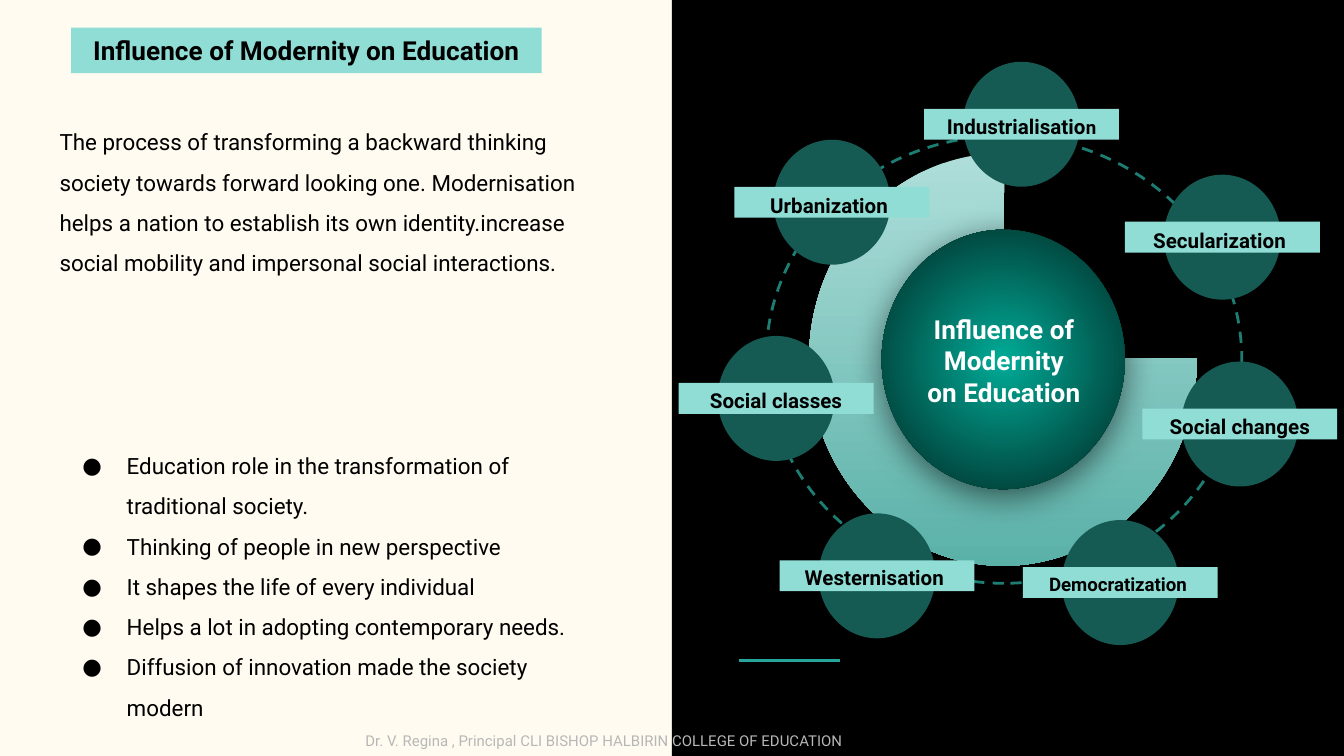
from dataclasses import dataclass
from typing import Optional

import pptx
import pptx.dml.color
import pptx.enum.dml
import pptx.enum.shapes
import pptx.enum.text
import pptx.oxml
import pptx.oxml.ns
import pptx.util
from lxml import etree

RGB = pptx.dml.color.RGBColor
SHAPE = pptx.enum.shapes.MSO_SHAPE
ALIGN = pptx.enum.text.PP_ALIGN
ANCHOR = pptx.enum.text.MSO_ANCHOR
Pt = pptx.util.Pt
qn = pptx.oxml.ns.qn

CREAM = RGB(0xFF, 0xFB, 0xF0)
BLACK = RGB(0, 0, 0)
WHITE = RGB(0xFF, 0xFF, 0xFF)
GREY = RGB(0xB7, 0xB7, 0xB7)
MINT = RGB(0x90, 0xDD, 0xD6)
PINE = RGB(0x15, 0x5B, 0x54)
TEAL = RGB(0x26, 0xA6, 0x9A)
DASH = RGB(0x1D, 0x7E, 0x74)
PALE = RGB(0xAF, 0xDE, 0xDA)
SEA = RGB(0x5A, 0xB1, 0xA8)
JADE = RGB(0x00, 0xAB, 0x97)
DEEP = RGB(0x02, 0x26, 0x22)

FONT = "Roboto"
COLS, ROWS = 100, 56.25
CELL = pptx.util.Inches(0.1)


@dataclass(frozen=True)
class Box:
    col: float
    row: float
    wide: float
    high: float

    def place(self) -> tuple[int, ...]:
        return tuple(round(n * CELL) for n in (self.col, self.row, self.wide, self.high))


@dataclass(frozen=True)
class Topic:
    name: str
    col: float
    row: float
    size: int = 11
    tail: str = ""
    tail_size: Optional[int] = None


TOPICS = [
    Topic("Industrialisatio", 71.65, 4.6, tail="n", tail_size=10),
    Topic("Secularization", 86.6, 13, tail=" ", tail_size=12),
    Topic("Social changes", 87.9, 26.9),
    Topic("Democratization ", 79, 38.7, size=10),
    Topic("Westernisation ", 60.9, 38.2),
    Topic("Social classes", 53.4, 25),
    Topic("Urbanization", 57.55, 10.4, tail=" ", tail_size=12),
]
INTRO = (
    "The process of transforming a backward thinking society towards forward "
    "looking one. Modernisation helps a nation to establish its own "
    "identity.increase social mobility and impersonal social interactions."
)
POINTS = [
    "Education role in the transformation of traditional society.",
    "Thinking of people in new perspective",
    "It shapes the life of every individual",
    "Helps a lot in adopting contemporary needs.",
    "Diffusion of innovation made the society modern",
]
HEADING = "Influence of Modernity on Education"


def add_shape(slide, kind, box: Box, fill: Optional[RGB] = None):
    shape = slide.shapes.add_shape(kind, *box.place())
    shape.shadow.inherit = False
    shape.line.fill.background()
    if fill is None:
        shape.fill.background()
    else:
        shape.fill.solid()
        shape.fill.fore_color.rgb = fill
    return shape


def shade(shape, start: RGB, end: RGB, round_fill: bool = False) -> None:
    shape.fill.gradient()
    for stop, tint, spot in zip(shape.fill.gradient_stops, (start, end), (0, 1)):
        stop.color.rgb = tint
        stop.position = spot
    if not round_fill:
        shape.fill.gradient_angle = 270
        return
    grad = shape._element.spPr.find(qn("a:gradFill"))
    grad.remove(grad.find(qn("a:lin")))
    route = etree.SubElement(grad, qn("a:path"), path="circle")
    etree.SubElement(route, qn("a:fillToRect"), l="50000", t="50000", r="50000", b="50000")


def cast_shadow(shape, blur: float, drop: float, share: int) -> None:
    effect = shape._element.spPr.find(qn("a:effectLst"))
    outer = etree.SubElement(
        effect, qn("a:outerShdw"), blurRad=str(Pt(blur)), dist=str(Pt(drop)),
        dir="5400000", algn="bl", rotWithShape="0",
    )
    tint = etree.SubElement(outer, qn("a:srgbClr"), val=str(BLACK))
    etree.SubElement(tint, qn("a:alpha"), val=str(share * 1000))


def set_frame(frame, anchor=ANCHOR.MIDDLE) -> None:
    frame.word_wrap = True
    frame.auto_size = pptx.enum.text.MSO_AUTO_SIZE.NONE
    frame.vertical_anchor = anchor
    frame.margin_left = frame.margin_right = CELL
    frame.margin_top = frame.margin_bottom = CELL


def style(para, size: float, tint: RGB, bold: bool = False, align=ALIGN.LEFT,
          space: Optional[float] = None) -> None:
    para.alignment = align
    para.line_spacing = space
    para.font.name = FONT
    para.font.size = Pt(size)
    para.font.bold = bold
    para.font.color.rgb = tint


def add_text(slide, box: Box, text: str, size: float, tint: RGB, bold: bool = False,
             align=ALIGN.LEFT, anchor=ANCHOR.TOP, space: Optional[float] = None):
    frame = slide.shapes.add_textbox(*box.place()).text_frame
    set_frame(frame, anchor)
    frame.text = text
    style(frame.paragraphs[0], size, tint, bold, align, space)
    return frame


def add_point(frame, text: str):
    para = frame.add_paragraph()
    para.text = text
    style(para, 12, BLACK, space=1.5)
    props = para._p.get_or_add_pPr()
    props.set("marL", str(round(5 * CELL)))
    props.set("indent", str(round(-3.3 * CELL)))
    tint = etree.Element(qn("a:buClr"))
    etree.SubElement(tint, qn("a:srgbClr"), val=str(BLACK))
    face = etree.Element(qn("a:buFont"), typeface=FONT)
    mark = etree.Element(qn("a:buChar"), char="●")
    for part in (tint, face, mark):
        props.find(qn("a:defRPr")).addprevious(part)
    return para


def add_label(slide, topic: Topic) -> None:
    band = Box(topic.col - 2.9, topic.row + 3.5, 14.5, 2.3)
    frame = add_shape(slide, SHAPE.RECTANGLE, band, MINT).text_frame
    set_frame(frame)
    para = frame.paragraphs[0]
    para.add_run().text = topic.name
    style(para, topic.size, BLACK, True, ALIGN.CENTER, 1.15)
    if topic.tail:
        run = para.add_run()
        run.text = topic.tail
        run.font.size = Pt(topic.tail_size)


def add_title(slide) -> None:
    title = slide.shapes.title
    title.left, title.top, title.width, title.height = Box(5.3, 2.05, 35, 3.4).place()
    title.fill.solid()
    title.fill.fore_color.rgb = MINT
    set_frame(title.text_frame)
    title.text_frame.text = HEADING
    style(title.text_frame.paragraphs[0], 14, BLACK, True, ALIGN.CENTER)


def add_wheel(slide) -> None:
    ring = add_shape(slide, SHAPE.OVAL, Box(58.05, 9.05, 33.3, 35.4))
    ring.rotation = 270
    ring.line.color.rgb = DASH
    ring.line.width = Pt(1.5)
    ring.line.dash_style = pptx.enum.dml.MSO_LINE.DASH
    pie = add_shape(slide, SHAPE.PIE, Box(60.2, 11.4, 28.9, 30.7))
    pie.adjustments[0], pie.adjustments[1] = 215.77, 162.15
    shade(pie, PALE, SEA)
    hub = add_shape(slide, SHAPE.OVAL, Box(65.6, 17.1, 18.1, 19.3))
    shade(hub, JADE, DEEP, round_fill=True)
    cast_shadow(hub, 18, 4, 55)
    add_text(slide, Box(68, 22.4, 13.4, 8.8), HEADING, 14, WHITE, True,
             ALIGN.CENTER, ANCHOR.MIDDLE)
    for topic in TOPICS:
        add_shape(slide, SHAPE.OVAL, Box(topic.col, topic.row, 8.7, 9.3), PINE)
    for topic in TOPICS:
        add_label(slide, topic)


def main() -> None:
    deck = pptx.Presentation()
    deck.slide_width, deck.slide_height = round(COLS * CELL), round(ROWS * CELL)
    slide = deck.slides.add_slide(deck.slide_layouts[5])
    slide.background.fill.solid()
    slide.background.fill.fore_color.rgb = CREAM
    add_shape(slide, SHAPE.RECTANGLE, Box(COLS / 2, 0, COLS / 2, ROWS), BLACK)
    start, level, reach, _ = Box(55, 49.15, 7.5, 0).place()
    rule = slide.shapes.add_connector(
        pptx.enum.shapes.MSO_CONNECTOR.STRAIGHT, start, level, start + reach, level)
    rule.line.color.rgb = TEAL
    rule.line.width = Pt(1.5)
    etree.SubElement(rule._element.spPr, qn("a:effectLst"))
    add_title(slide)
    body = add_text(slide, Box(3.45, 7.55, 40.7, 46.5), INTRO, 12, BLACK, space=1.5)
    points = [add_point(body, text) for text in POINTS]
    points[0].space_before = Pt(87)
    add_wheel(slide)
    add_text(slide, Box(26.2, 53.4, 54.5, 2.8),
             "Dr. V. Regina , Principal CLI BISHOP HALBIRIN COLLEGE OF EDUCATION", 8, GREY)
    deck.save("out.pptx")


if __name__ == "__main__":
    main()
